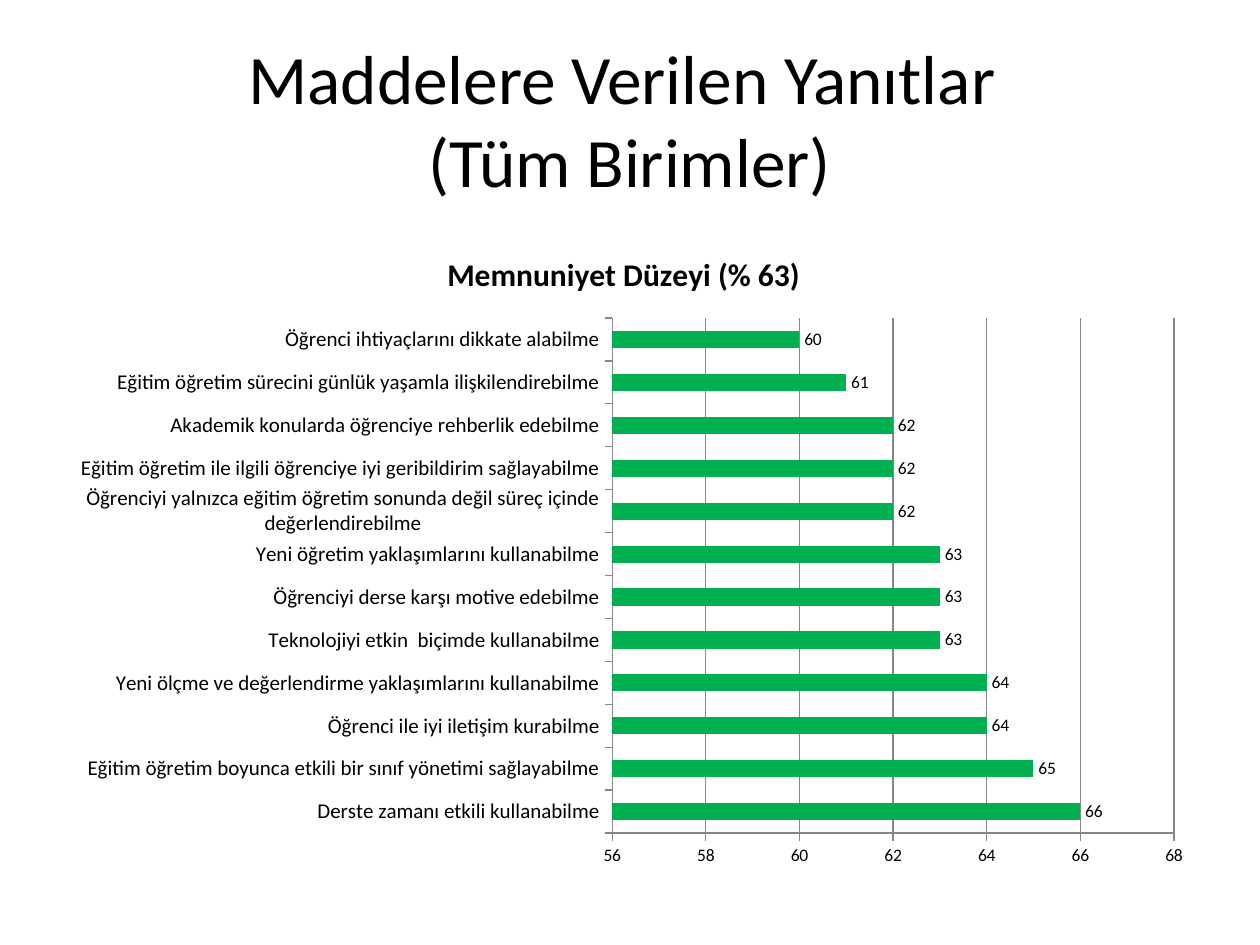
from pptx import Presentation
from pptx.chart.data import CategoryChartData
from pptx.dml.color import RGBColor
from pptx.enum.chart import XL_CHART_TYPE as ChartType, XL_LABEL_POSITION as LabelPosition
from pptx.enum.chart import XL_TICK_MARK as TickMark
from pptx.enum.text import MSO_ANCHOR as Anchor, PP_ALIGN as Align
from pptx.oxml import parse_xml
from pptx.oxml.ns import nsdecls
from pptx.util import Inches, Pt

COLORS = {"text": "000000", "bar": "00B050", "grid": "868686"}
FONT = "Calibri"
WIDTH, HEIGHT = Inches(10), Inches(7.5)

CHART_TITLE = "Memnuniyet Düzeyi (% 63)"
ANSWERS = [  # from the bottom bar to the top one
    ("Derste zamanı etkili kullanabilme", 66),
    ("Eğitim öğretim boyunca etkili bir sınıf yönetimi sağlayabilme", 65),
    ("Öğrenci ile iyi iletişim kurabilme", 64),
    ("Yeni ölçme ve değerlendirme yaklaşımlarını kullanabilme", 64),
    ("Teknolojiyi etkin  biçimde kullanabilme", 63),
    ("Öğrenciyi derse karşı motive edebilme", 63),
    ("Yeni öğretim yaklaşımlarını kullanabilme", 63),
    ("Öğrenciyi yalnızca eğitim öğretim sonunda değil süreç içinde değerlendirebilme", 62),
    ("Eğitim öğretim ile ilgili öğrenciye iyi geribildirim sağlayabilme", 62),
    ("Akademik konularda öğrenciye rehberlik edebilme", 62),
    ("Eğitim öğretim sürecini günlük yaşamla ilişkilendirebilme", 61),
    ("Öğrenci ihtiyaçlarını dikkate alabilme", 60),
]


def style_font(font, size, bold=False, color="text"):
    font.name, font.size, font.bold = FONT, Pt(size), bold
    font.color.rgb = RGBColor.from_string(COLORS[color])


def write_text(frame, text, size, bold=False, align=Align.CENTER):
    paragraph = frame.paragraphs[0]
    paragraph.text = text
    paragraph.alignment = align
    for run in paragraph.runs:
        style_font(run.font, size, bold)


class SlideBuilder:
    """Holds the current slide; lengths are shares of the slide's size."""

    def __init__(self, slide):
        self.slide = slide

    def box(self, left, top, width, height):
        return [int(share * full) for share, full in
                zip((left, top, width, height), (WIDTH, HEIGHT) * 2)]

    def heading(self, text, place, size):
        frame = self.slide.shapes.add_textbox(*self.box(*place)).text_frame
        frame.word_wrap = True
        frame.vertical_anchor = Anchor.MIDDLE
        write_text(frame, text, size)

    def bar_chart(self, title, rows, place, scale, plot):
        data = CategoryChartData(number_format="0")
        data.categories = [label for label, _ in rows]
        data.add_series(title, [value for _, value in rows])
        chart = self.slide.shapes.add_chart(
            ChartType.BAR_CLUSTERED, *self.box(*place), data).chart
        style_font(chart.font, 10)
        chart.has_legend = False
        chart.has_title = True
        write_text(chart.chart_title.text_frame, title, 18, bold=True)
        chart.chart_title.include_in_layout = False

        # Bars and their values
        bars = chart.plots[0]
        bars.gap_width = 150
        bars.vary_by_categories = False
        fill = bars.series[0].format.fill
        fill.solid()
        fill.fore_color.rgb = RGBColor.from_string(COLORS["bar"])
        bars.has_data_labels = True
        labels = bars.data_labels
        labels.show_value = True
        labels.number_format, labels.number_format_is_linked = "0", False
        labels.position = LabelPosition.OUTSIDE_END
        style_font(labels.font, 10)

        # Axes
        value_axis, category_axis = chart.value_axis, chart.category_axis
        value_axis.minimum_scale, value_axis.maximum_scale, value_axis.major_unit = scale
        value_axis.has_major_gridlines = True
        tick_labels = value_axis.tick_labels
        tick_labels.number_format, tick_labels.number_format_is_linked = "0", False
        for axis, size in ((value_axis, 10), (category_axis, 12)):
            axis.major_tick_mark = TickMark.OUTSIDE
            style_font(axis.tick_labels.font, size)
        for line in (value_axis.format.line, category_axis.format.line,
                     value_axis.major_gridlines.format.line):
            line.color.rgb = RGBColor.from_string(COLORS["grid"])
            line.width = Pt(0.75)
        self.fix_plot_area(chart, plot)

    def fix_plot_area(self, chart, plot):
        sizes = "".join(f'<c:{key} val="{share}"/>' for key, share in zip("xywh", plot))
        layout = parse_xml(
            f'<c:layout {nsdecls("c")}><c:manualLayout><c:layoutTarget val="inner"/>'
            f'<c:xMode val="edge"/><c:yMode val="edge"/>{sizes}</c:manualLayout></c:layout>')
        plot_area = chart.plots[0]._element.getparent()
        for old in plot_area.findall(layout.tag):
            plot_area.remove(old)
        plot_area.insert(0, layout)


def main():
    presentation = Presentation()
    presentation.slide_width, presentation.slide_height = WIDTH, HEIGHT
    builder = SlideBuilder(presentation.slides.add_slide(presentation.slide_layouts[6]))

    # Heading
    builder.heading("Maddelere Verilen Yanıtlar \v(Tüm Birimler)",
                    place=(0.05, 0.04, 0.9, 0.17), size=39.6)
    # Satisfaction by item
    builder.bar_chart(CHART_TITLE, ANSWERS, place=(0.04, 0.24, 0.91, 0.69),
                      scale=(56, 68, 2), plot=(0.49, 0.14, 0.49, 0.79))
    presentation.save("out.pptx")


if __name__ == "__main__":
    main()
